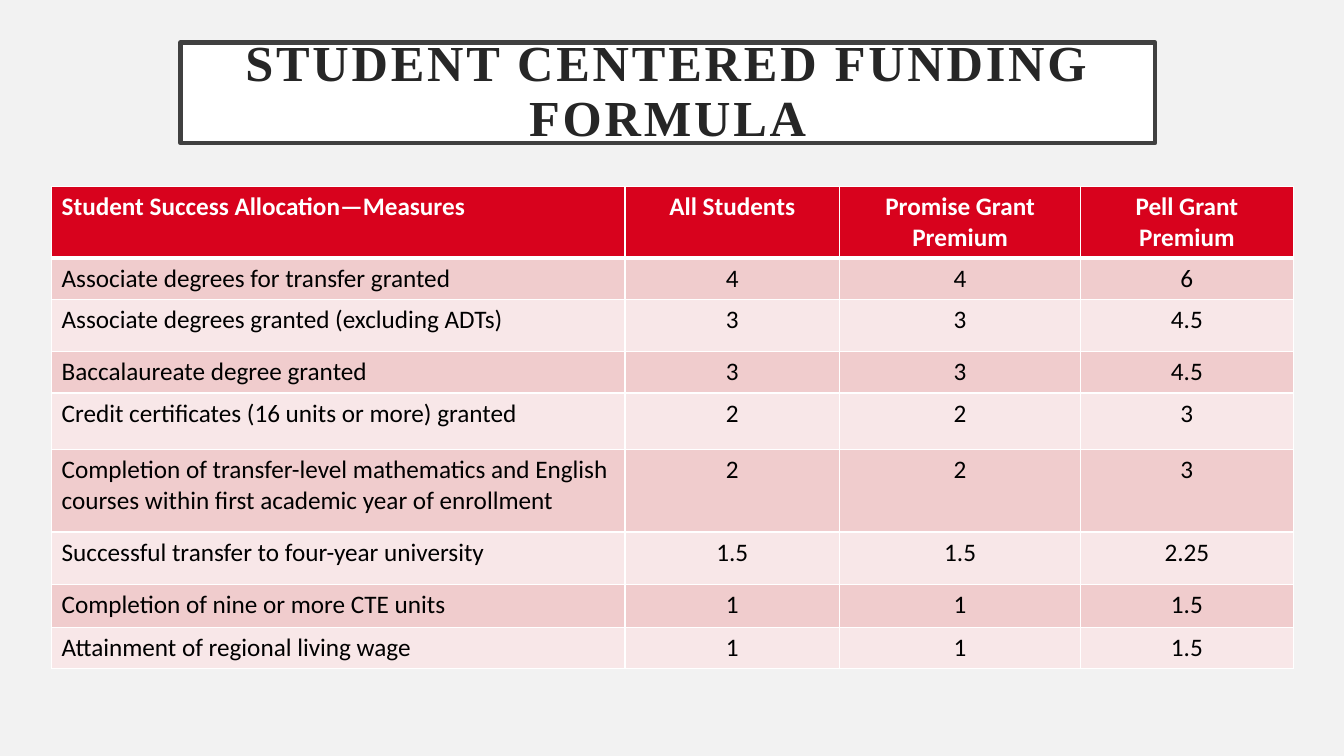
from lxml.etree import SubElement
from pptx import Presentation
from pptx.dml.color import RGBColor
from pptx.enum.text import MSO_ANCHOR, MSO_AUTO_SIZE, PP_ALIGN
from pptx.oxml import parse_xml
from pptx.oxml.ns import nsdecls
from pptx.util import Cm, Pt

COLORS = {
    "background": "F2F2F2",
    "white": "FFFFFF",
    "frame": "404040",
    "title": "262626",
    "header": "D8021D",
    "odd_row": "F0CCCD",
    "even_row": "F8E7E8",
    "body": "000000",
}
MEASURES = [
    ("Student Success Allocation—Measures", "All Students", "Promise Grant Premium", "Pell Grant Premium"),
    ("Associate degrees for transfer granted", "4", "4", "6"),
    ("Associate degrees granted (excluding ADTs)", "3", "3", "4.5"),
    ("Baccalaureate degree granted", "3", "3", "4.5"),
    ("Credit certificates (16 units or more) granted", "2", "2", "3"),
    ("Completion of transfer-level mathematics and English courses within first academic year of enrollment",
     "2", "2", "3"),
    ("Successful transfer to four-year university", "1.5", "1.5", "2.25"),
    ("Completion of nine or more CTE units", "1", "1", "1.5"),
    ("Attainment of regional living wage", "1", "1", "1.5"),
]
COLUMN_WIDTHS = [14.45, 5.41, 6.07, 5.36]
ROW_HEIGHTS = [1.8, 1.04, 1.32, 1.04, 1.42, 2.08, 1.32, 1.09, 1.04]


def format_font(font, color, values):
    for name, value in values.items():
        setattr(font, name, value)
    font.color.rgb = RGBColor.from_string(COLORS[color])


def add_border(cell, position, side, points):
    border = parse_xml(
        f'<a:{side} {nsdecls("a")} w="{Pt(points)}"><a:solidFill>'
        f'<a:srgbClr val="{COLORS["white"]}"/></a:solidFill></a:{side}>'
    )
    cell._tc.get_or_add_tcPr().insert(position, border)


presentation = Presentation()
presentation.slide_width = Cm(33.87)
presentation.slide_height = Cm(19.05)
slide = presentation.slides.add_slide(presentation.slide_layouts[5])
slide.background.fill.solid()
slide.background.fill.fore_color.rgb = RGBColor.from_string(COLORS["background"])

title = slide.shapes.title
title_box = {"left": Cm(4.55), "top": Cm(1.07), "width": Cm(24.56), "height": Cm(2.54)}
for name, value in title_box.items():
    setattr(title, name, value)
title.fill.solid()
title.fill.fore_color.rgb = RGBColor.from_string(COLORS["white"])
title.line.color.rgb = RGBColor.from_string(COLORS["frame"])
title.line.width = Pt(3)
title_frame = {
    "margin_left": Cm(0.76),
    "margin_right": Cm(0.76),
    "margin_top": Cm(0.51),
    "margin_bottom": Cm(0.51),
    "vertical_anchor": MSO_ANCHOR.MIDDLE,
    "word_wrap": True,
    "auto_size": MSO_AUTO_SIZE.NONE,
}
for name, value in title_frame.items():
    setattr(title.text_frame, name, value)
title.text_frame.text = "STUDENT CENTERED FUNDING FORMULA"
paragraph = title.text_frame.paragraphs[0]
paragraph.alignment = PP_ALIGN.CENTER
paragraph.line_spacing = 0.9
run = paragraph.runs[0]
format_font(run.font, "title", {"name": "Times New Roman", "size": Pt(36), "bold": True})
run._r.get_or_add_rPr().set("spc", "200")

table = slide.shapes.add_table(
    len(MEASURES), len(COLUMN_WIDTHS), Cm(1.3), Cm(4.7), Cm(sum(COLUMN_WIDTHS)), Cm(sum(ROW_HEIGHTS))
).table
for column, width in zip(table.columns, COLUMN_WIDTHS):
    column.width = Cm(width)
for row, height in zip(table.rows, ROW_HEIGHTS):
    row.height = Cm(height)

for row_index, measure in enumerate(MEASURES):
    is_header = row_index == 0
    fill = "header" if is_header else ("odd_row" if row_index % 2 else "even_row")
    borders = {"lnL": 1, "lnR": 1, "lnT": 3 if row_index == 1 else 1, "lnB": 3 if is_header else 1}
    for column_index, text in enumerate(measure):
        cell = table.cell(row_index, column_index)
        cell.text = text
        cell.fill.solid()
        cell.fill.fore_color.rgb = RGBColor.from_string(COLORS[fill])
        paragraph = cell.text_frame.paragraphs[0]
        paragraph.alignment = PP_ALIGN.CENTER if column_index else PP_ALIGN.LEFT
        format_font(
            paragraph.runs[0].font,
            "white" if is_header else "body",
            {"name": "Calibri", "size": Pt(18), "bold": is_header},
        )
        for position, (side, points) in enumerate(borders.items()):
            add_border(cell, position, side, points)

presentation.save("out.pptx")
